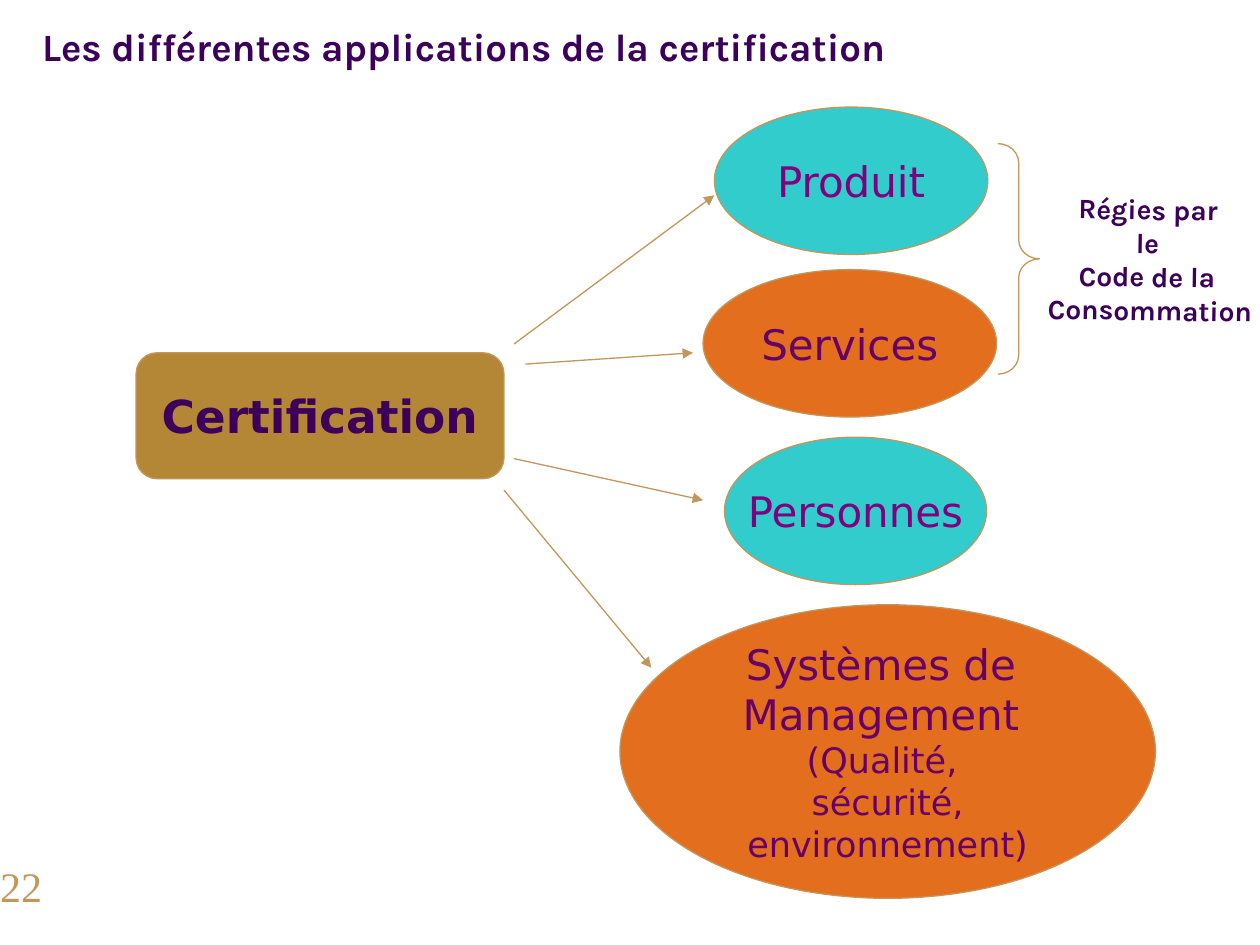
"""Build the slide on the different applications of certification."""
from dataclasses import dataclass

from lxml import etree
from pptx import Presentation
from pptx.dml.color import RGBColor
from pptx.enum import shapes, text
from pptx.oxml import ns
from pptx.util import Inches, Pt


@dataclass(frozen=True)
class Theme:
    gold: str = "C3965A"
    ochre: str = "B48737"
    turquoise: str = "33CCCC"
    orange: str = "E36E1E"
    indigo: str = "3C005A"
    purple: str = "800080"
    plum: str = "660066"
    sans: str = "DejaVu Sans"
    heading: str = "Karla"
    serif: str = "Times New Roman"
    root_size: int = 26
    body_size: int = 24
    title_size: int = 22
    detail_size: int = 20
    note_size: int = 16
    line_width: float = 0.75


theme = Theme()


def write(shape, lines, font, color, bold=False, align=text.PP_ALIGN.CENTER):
    frame = shape.text_frame
    frame.word_wrap = False
    for index, (line, size) in enumerate(lines):
        paragraph = frame.add_paragraph() if index else frame.paragraphs[0]
        paragraph.text = line
        paragraph.alignment = align
        paragraph.font.name = font
        paragraph.font.size = Pt(size)
        paragraph.font.bold = bold
        paragraph.font.color.rgb = RGBColor.from_string(color)
    return frame


def add_outlined(kind, box, fill=None):
    shape = slide.shapes.add_shape(kind, *map(Inches, box))
    shape.shadow.inherit = False
    shape.line.color.rgb = RGBColor.from_string(theme.gold)
    shape.line.width = Pt(theme.line_width)
    if fill:
        shape.fill.solid()
        shape.fill.fore_color.rgb = RGBColor.from_string(fill)
    else:
        shape.fill.background()
    return shape


prs = Presentation()
prs.slide_width, prs.slide_height = Inches(10), Inches(7.5)
slide = prs.slides.add_slide(prs.slide_layouts[6])

page_number = slide.shapes.add_textbox(Inches(0), Inches(6.73), Inches(0.81), Inches(0.5))
frame = write(page_number, [("22", theme.body_size)], theme.serif, theme.gold,
              align=text.PP_ALIGN.LEFT)
frame.margin_left = frame.margin_right = frame.margin_top = frame.margin_bottom = 0
frame.vertical_anchor = text.MSO_ANCHOR.BOTTOM

systems = [("Systèmes de ", theme.body_size), ("Management ", theme.body_size),
           ("(Qualité, \vsécurité,\venvironnement)", theme.detail_size)]
applications = [
    ([("Produit", theme.body_size)], (5.67, 0.85, 2.17, 1.17), theme.turquoise, theme.purple),
    ([("Services", theme.body_size)], (5.58, 2.14, 2.33, 1.17), theme.orange, theme.plum),
    (systems, (4.92, 4.8, 4.25, 2.33), theme.orange, theme.plum),
    ([("Personnes", theme.body_size)], (5.75, 3.47, 2.08, 1.17), theme.turquoise, theme.purple),
]
for lines, box, fill, color in applications:
    application = add_outlined(shapes.MSO_SHAPE.OVAL, box, fill)
    write(application, lines, theme.sans, color).vertical_anchor = text.MSO_ANCHOR.MIDDLE

title = slide.shapes.add_textbox(Inches(0.09), Inches(0.13), Inches(7.18), Inches(0.47))
frame = write(title, [("Les différentes applications de la certification", theme.title_size)],
              theme.heading, theme.indigo, bold=True)
frame.auto_size = text.MSO_AUTO_SIZE.SHAPE_TO_FIT_TEXT

certification = add_outlined(shapes.MSO_SHAPE.ROUNDED_RECTANGLE, (1.08, 2.8, 2.92, 1), theme.ochre)
frame = write(certification, [("Certification", theme.root_size)], theme.sans, theme.indigo, bold=True)
frame.vertical_anchor = text.MSO_ANCHOR.MIDDLE

brace = add_outlined(shapes.MSO_SHAPE.RIGHT_BRACE, (7.92, 1.14, 0.33, 1.83))
brace.adjustments[0] = 0.46

consumer_code = slide.shapes.add_textbox(Inches(8.48), Inches(1.22), Inches(1.26), Inches(1.77))
consumer_code.rotation = 271
code_lines = ["Régies par ", "le ", "Code de la ", "Consommation"]
frame = write(consumer_code, [(line, theme.note_size) for line in code_lines],
              theme.heading, theme.indigo, bold=True)
frame.auto_size = text.MSO_AUTO_SIZE.SHAPE_TO_FIT_TEXT
consumer_code.element.txBody.find(ns.qn("a:bodyPr")).set("vert", "eaVert")

arrows = [
    (4.08, 2.73, 5.67, 1.55),
    (4.17, 2.89, 5.5, 2.8),
    (4.08, 3.64, 5.58, 3.97),
    (4, 3.89, 5.17, 5.3),
]
for ends in arrows:
    arrow = slide.shapes.add_connector(shapes.MSO_CONNECTOR.STRAIGHT, *map(Inches, ends))
    arrow.line.color.rgb = RGBColor.from_string(theme.gold)
    arrow.line.width = Pt(theme.line_width)
    etree.SubElement(arrow.line._get_or_add_ln(), ns.qn("a:tailEnd"), type="triangle")
    etree.SubElement(arrow.element.spPr, ns.qn("a:effectLst"))

prs.save("out.pptx")
